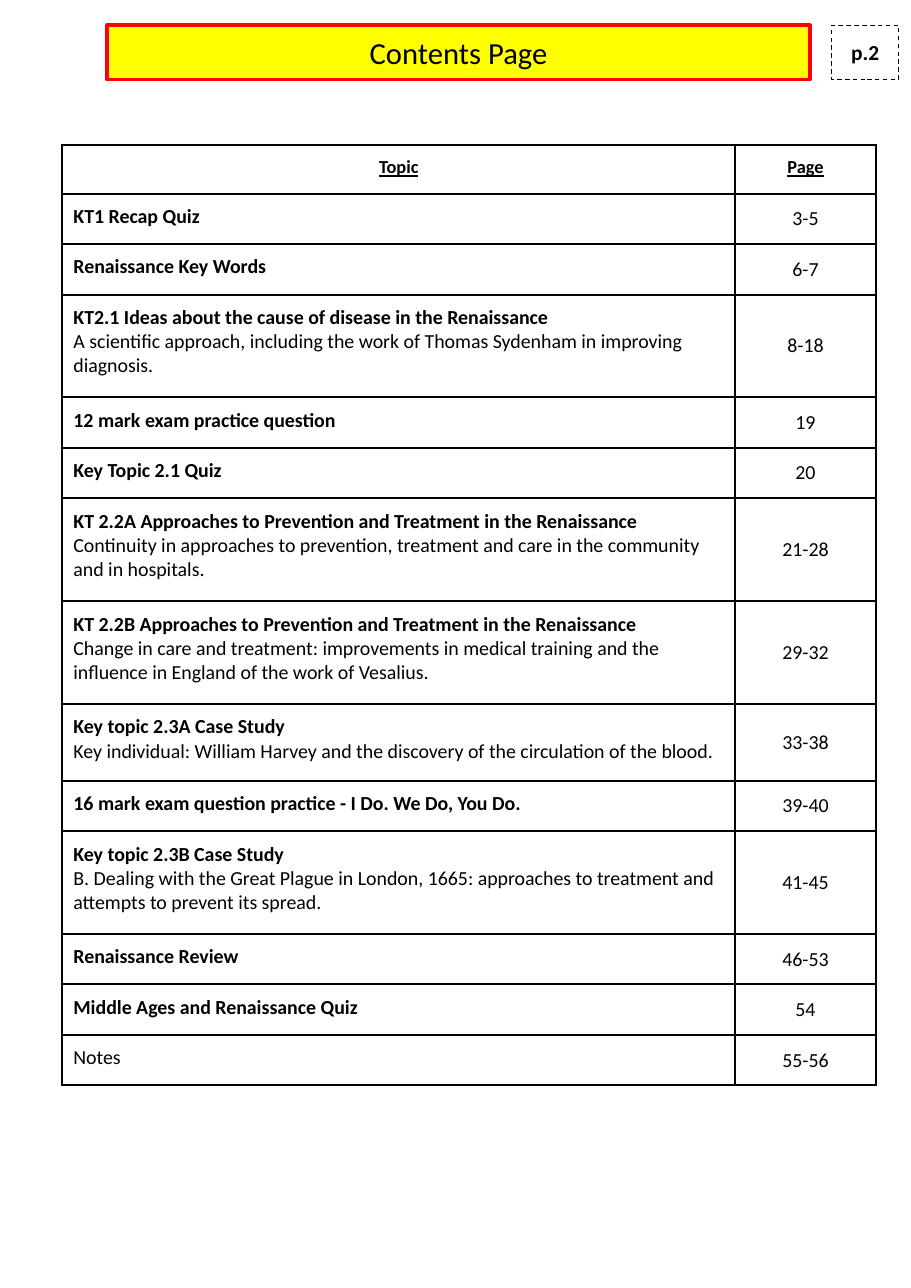
from lxml import etree
from pptx import Presentation
from pptx.dml.color import RGBColor
from pptx.enum.dml import MSO_LINE
from pptx.enum.shapes import MSO_SHAPE
from pptx.enum.text import MSO_ANCHOR, PP_ALIGN
from pptx.oxml.ns import qn
from pptx.util import Pt

RECT = MSO_SHAPE.RECTANGLE
DASH = MSO_LINE.DASH
TOP, MIDDLE = MSO_ANCHOR.TOP, MSO_ANCHOR.MIDDLE
LEFT, CENTER = PP_ALIGN.LEFT, PP_ALIGN.CENTER

# Row heights by number of text lines
HEIGHTS = {1: 33, 2: 50.2, 3: 67.2}
HEADER_HEIGHT = 31.5

# Heading, description, pages, text lines
TOPICS = [
    ("KT1 Recap Quiz", "", "3-5", 1),
    ("Renaissance Key Words", "", "6-7", 1),
    ("KT2.1 Ideas about the cause of disease in the Renaissance",
     "A scientific approach, including the work of Thomas Sydenham in improving diagnosis.",
     "8-18", 3),
    ("12 mark exam practice question", "", "19", 1),
    ("Key Topic 2.1 Quiz", "", "20", 1),
    ("KT 2.2A Approaches to Prevention and Treatment in the Renaissance",
     "Continuity in approaches to prevention, treatment and care in the community "
     "and in hospitals.", "21-28", 3),
    ("KT 2.2B Approaches to Prevention and Treatment in the Renaissance",
     "Change in care and treatment: improvements in medical training and the "
     "influence in England of the work of Vesalius.", "29-32", 3),
    ("Key topic 2.3A Case Study",
     "Key individual: William Harvey and the discovery of the circulation of the blood.",
     "33-38", 2),
    ("16 mark exam question practice - I Do. We Do, You Do.", "", "39-40", 1),
    ("Key topic 2.3B Case Study",
     "B. Dealing with the Great Plague in London, 1665: approaches to treatment and "
     "attempts to prevent its spread.", "41-45", 3),
    ("Renaissance Review", "", "46-53", 1),
    ("Middle Ages and Renaissance Quiz", "", "54", 1),
    ("", "Notes", "55-56", 1),
]


def rgb(value):
    return RGBColor.from_string(value)


class Page:
    font = "Calibri"
    ink = "000000"
    inset = 7.2
    border = 1.5

    def __init__(self, s):
        self.s = s

    def text(self, tf, lines, size, align=LEFT, underline=False):
        """Set (text, bold) lines, one paragraph each."""
        for i, (words, bold) in enumerate(lines):
            p = tf.add_paragraph() if i else tf.paragraphs[0]
            p.text = words
            p.alignment = align
            font = p.font
            font.name, font.size = self.font, Pt(size)
            font.bold, font.underline = bold, underline
            font.color.rgb = rgb(self.ink)

    def box(self, x, y, w, h, label, size, fill, line, weight, bold=False, dash=None):
        sp = self.s.shapes.add_shape(RECT, Pt(x), Pt(y), Pt(w), Pt(h))
        sp.shadow.inherit = False
        sp.fill.solid()
        sp.fill.fore_color.rgb = rgb(fill)
        sp.line.color.rgb = rgb(line)
        sp.line.width = Pt(weight)
        if dash:
            sp.line.dash_style = dash
        tf = sp.text_frame
        tf.word_wrap = True
        tf.vertical_anchor = MIDDLE
        tf.margin_left = tf.margin_right = Pt(self.inset)
        tf.margin_top = tf.margin_bottom = Pt(self.inset)
        self.text(tf, [(label, bold)], size, CENTER)

    def table(self, x, y, widths, heights):
        frame = self.s.shapes.add_table(len(heights), len(widths), Pt(x), Pt(y),
                                        Pt(sum(widths)), Pt(sum(heights)))
        table = frame.table
        table.first_row = table.horz_banding = False
        for column, width in zip(table.columns, widths):
            column.width = Pt(width)
        for row, height in zip(table.rows, heights):
            row.height = Pt(height)
        return table

    def cell(self, cell, lines, size, align=LEFT, anchor=TOP, underline=False):
        cell.margin_left = cell.margin_right = Pt(self.inset)
        cell.margin_top = cell.margin_bottom = Pt(self.inset)
        cell.vertical_anchor = anchor
        # Borders come before the fill in the cell properties
        tc_pr = cell._tc.get_or_add_tcPr()
        for side in ("a:lnL", "a:lnR", "a:lnT", "a:lnB"):
            ln = etree.SubElement(tc_pr, qn(side), w=str(Pt(self.border)))
            fill = etree.SubElement(ln, qn("a:solidFill"))
            etree.SubElement(fill, qn("a:srgbClr"), val=self.ink)
        cell.fill.background()
        self.text(cell.text_frame, lines, size, align, underline)


def main():
    prs = Presentation()
    prs.slide_width, prs.slide_height = Pt(595.44), Pt(841.68)
    page = Page(prs.slides.add_slide(prs.slide_layouts[6]))

    # Title and page number
    page.box(70, 16.5, 459.5, 35.5, "Contents Page", 20, "FFFF00", "FF0000", 2.25)
    page.box(543.6, 16.5, 44, 35.5, "p.2", 14, "FFFFFF", "000000", 0.75,
             bold=True, dash=DASH)

    # Contents table
    heights = [HEADER_HEIGHT] + [HEIGHTS[count] for *_, count in TOPICS]
    table = page.table(40.8, 95, [439.8, 91.8], heights)
    for column, label in enumerate(("Topic", "Page")):
        page.cell(table.cell(0, column), [(label, True)], 12, CENTER, underline=True)
    for row, (heading, detail, pages, _) in enumerate(TOPICS, 1):
        lines = [(words, bold) for words, bold in ((heading, True), (detail, False)) if words]
        page.cell(table.cell(row, 0), lines, 13)
        page.cell(table.cell(row, 1), [(pages, False)], 13, CENTER, MIDDLE)

    prs.save("out.pptx")


if __name__ == "__main__":
    main()
